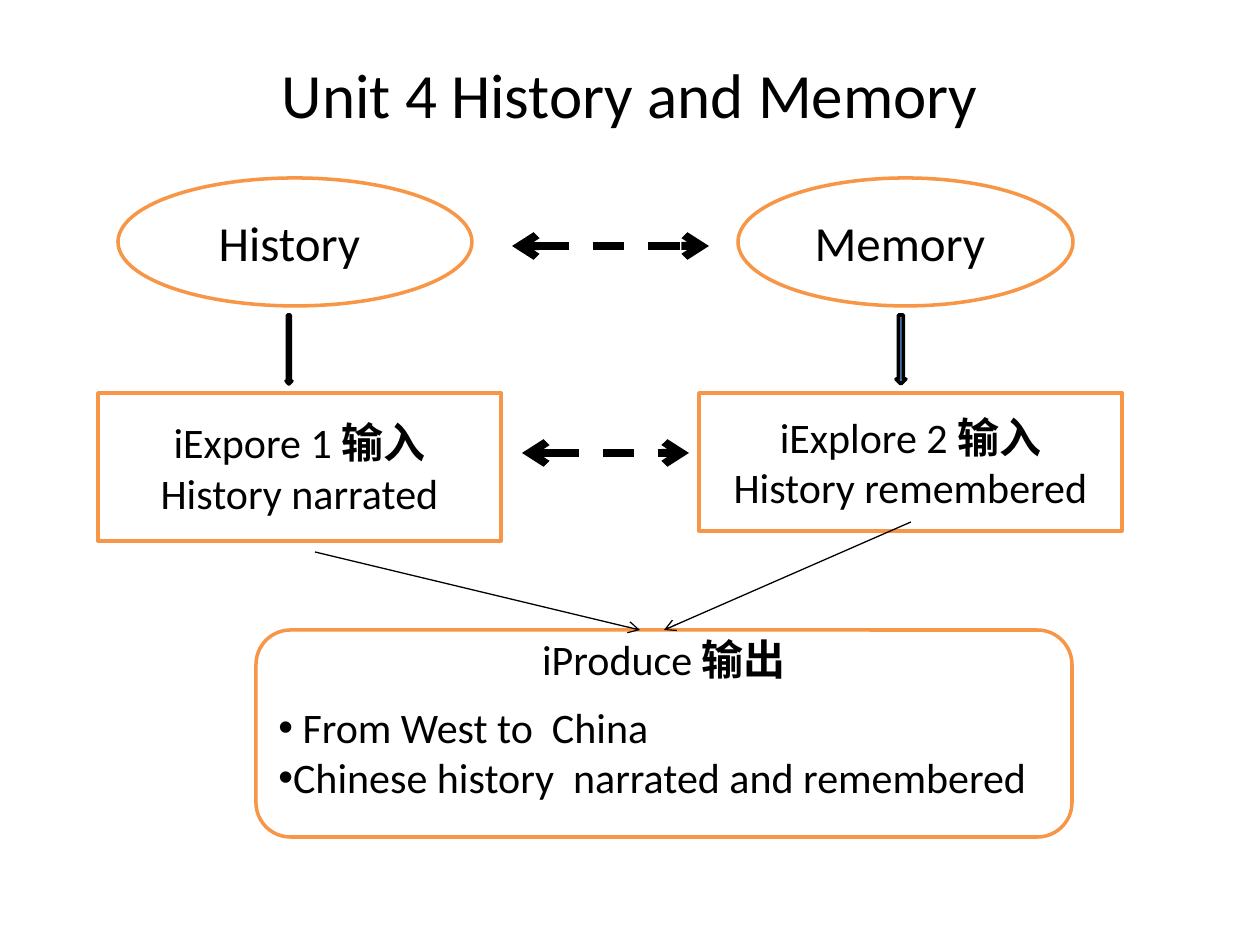
import pptx
import pptx.dml.color
import pptx.enum.dml
import pptx.enum.shapes
import pptx.enum.text
import pptx.oxml.ns
import pptx.util
import lxml.etree

RGBColor = pptx.dml.color.RGBColor
SHAPE = pptx.enum.shapes.MSO_SHAPE
ALIGN = pptx.enum.text.PP_ALIGN
MIDDLE = pptx.enum.text.MSO_ANCHOR.MIDDLE
Pt = pptx.util.Pt
qn = pptx.oxml.ns.qn

BLACK = RGBColor(0, 0, 0)
WHITE = RGBColor(255, 255, 255)
ORANGE = RGBColor(0xF7, 0x96, 0x46)
BLUE = RGBColor(0x4F, 0x81, 0xBD)
PX = 914400 / 126


def emu(*lengths):
    return [round(length * PX) for length in lengths]


def write_lines(shape, lines, size):
    """Fill a shape with paragraphs, each a list of (text, bold) spans."""
    frame = shape.text_frame
    frame.word_wrap = True
    frame.vertical_anchor = MIDDLE
    for index, spans in enumerate(lines):
        para = frame.paragraphs[0] if index == 0 else frame.add_paragraph()
        para.alignment = ALIGN.CENTER
        for text, bold in spans:
            span = para.add_run()
            span.text = text
            font_format = {"name": "Calibri", "size": Pt(size), "bold": bold}
            for name, value in font_format.items():
                setattr(span.font, name, value)
            span.font.color.rgb = BLACK


deck = pptx.Presentation()
deck.slide_width, deck.slide_height = emu(1260, 945)
page = deck.slides.add_slide(deck.slide_layouts[5])

title = page.shapes.title
title.left, title.top, title.width, title.height = emu(63, 38, 1134, 110)
write_lines(title, [[("Unit 4 History and Memory", False)]], 36)

# Topics, inputs and output
boxes = [
    (SHAPE.OVAL, (118, 178, 354, 128), 28, [[("History ", False)]]),
    (SHAPE.OVAL, (738, 178, 335, 128), 28, [[("Memory ", False)]]),
    (SHAPE.RECTANGLE, (98, 393, 403, 148), 24,
     [[("iExpore 1 ", False), ("输入", True)], [("History narrated", False)]]),
    (SHAPE.RECTANGLE, (699, 393, 423, 138), 24,
     [[("iExplore 2 ", False), ("输入", True)], [("History remembered", False)]]),
    (SHAPE.ROUNDED_RECTANGLE, (256, 630, 816, 207), 24,
     [[("iProduce ", False), ("输出", True)],
      [(" From West to  China", False)],
      [("Chinese history  narrated and remembered", False)]]),
]
for kind, place, size, lines in boxes:
    box = page.shapes.add_shape(kind, *emu(*place))
    box.shadow.inherit = False
    box.fill.solid()
    box.fill.fore_color.rgb = WHITE
    box.line.color.rgb = ORANGE
    box.line.width = Pt(2)
    write_lines(box, lines, size)

output_box = box
output_box.text_frame.margin_top, output_box.text_frame.margin_bottom = emu(0, 31)
heading, *bullets = output_box.text_frame.paragraphs
heading.space_after = Pt(10)
for para in bullets:
    para.alignment = ALIGN.LEFT
    properties = para._p.get_or_add_pPr()
    lxml.etree.SubElement(properties, qn("a:buFont"), typeface="Arial")
    lxml.etree.SubElement(properties, qn("a:buChar"), char="•")

# Links: start, end, width, dashed and two-headed
links = [
    ((512, 246), (709, 246), 4.5, True),
    ((522, 453), (689, 453), 4.5, True),
    ((315, 552), (640, 630), 0.75, False),
    ((911, 522), (664, 630), 0.75, False),
]
for start, end, width, two_way in links:
    link = page.shapes.add_connector(
        pptx.enum.shapes.MSO_CONNECTOR.STRAIGHT, *emu(*start, *end))
    link.line.color.rgb = BLACK
    link.line.width = Pt(width)
    if two_way:
        link.line.dash_style = pptx.enum.dml.MSO_LINE.DASH
    outline = link._element.spPr.find(qn("a:ln"))
    for tag in ("a:headEnd", "a:tailEnd") if two_way else ("a:tailEnd",):
        lxml.etree.SubElement(outline, qn(tag), type="arrow")
    lxml.etree.SubElement(link._element.spPr, qn("a:effectLst"))
link.end_connect(output_box, 0)

for left, width in [(286, 6), (896, 10)]:
    arrow = page.shapes.add_shape(SHAPE.DOWN_ARROW, *emu(left, 315, width, 69))
    arrow.shadow.inherit = False
    arrow.fill.solid()
    arrow.fill.fore_color.rgb = BLUE
    arrow.line.color.rgb = BLACK
    arrow.line.width = Pt(2)

deck.save("out.pptx")
